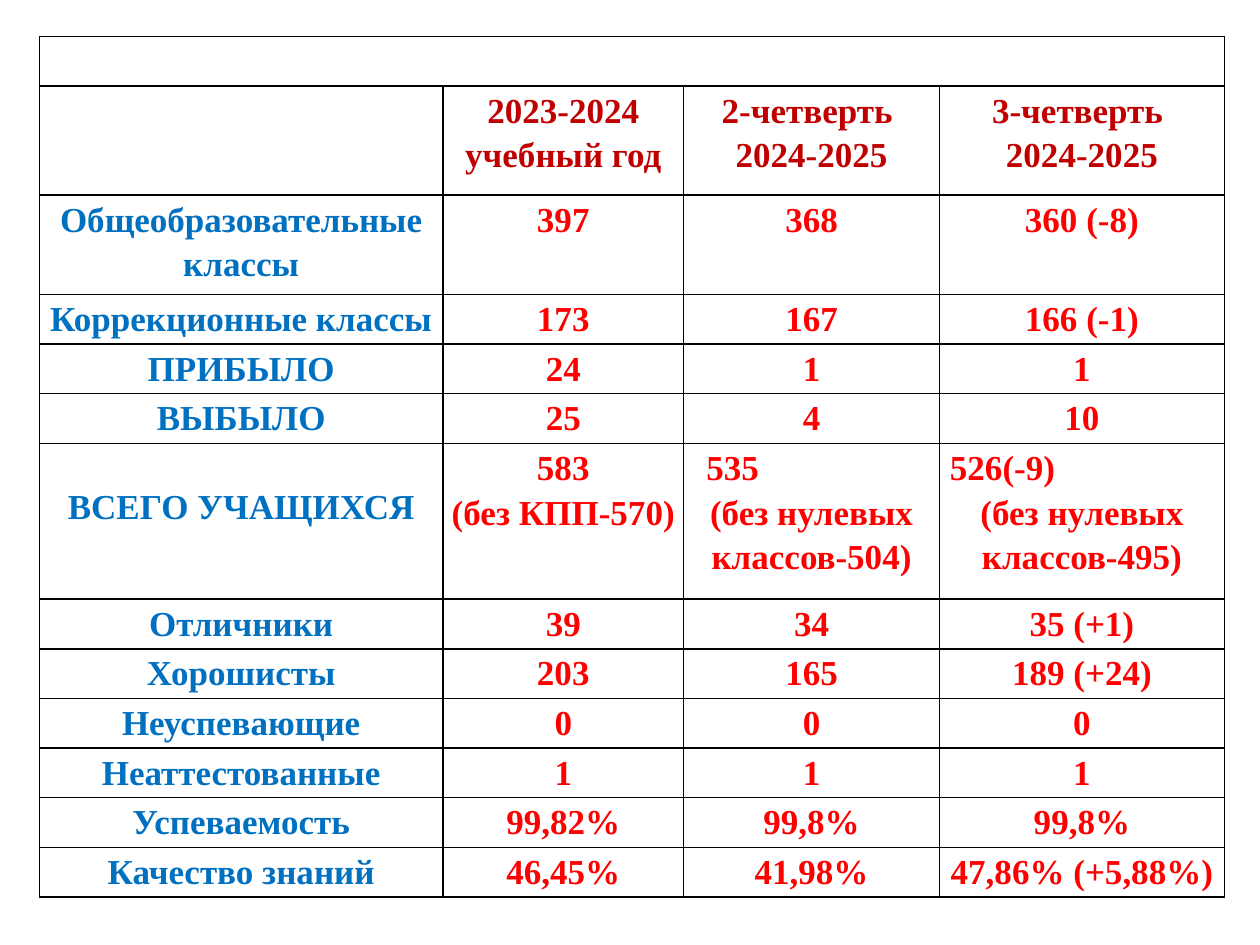
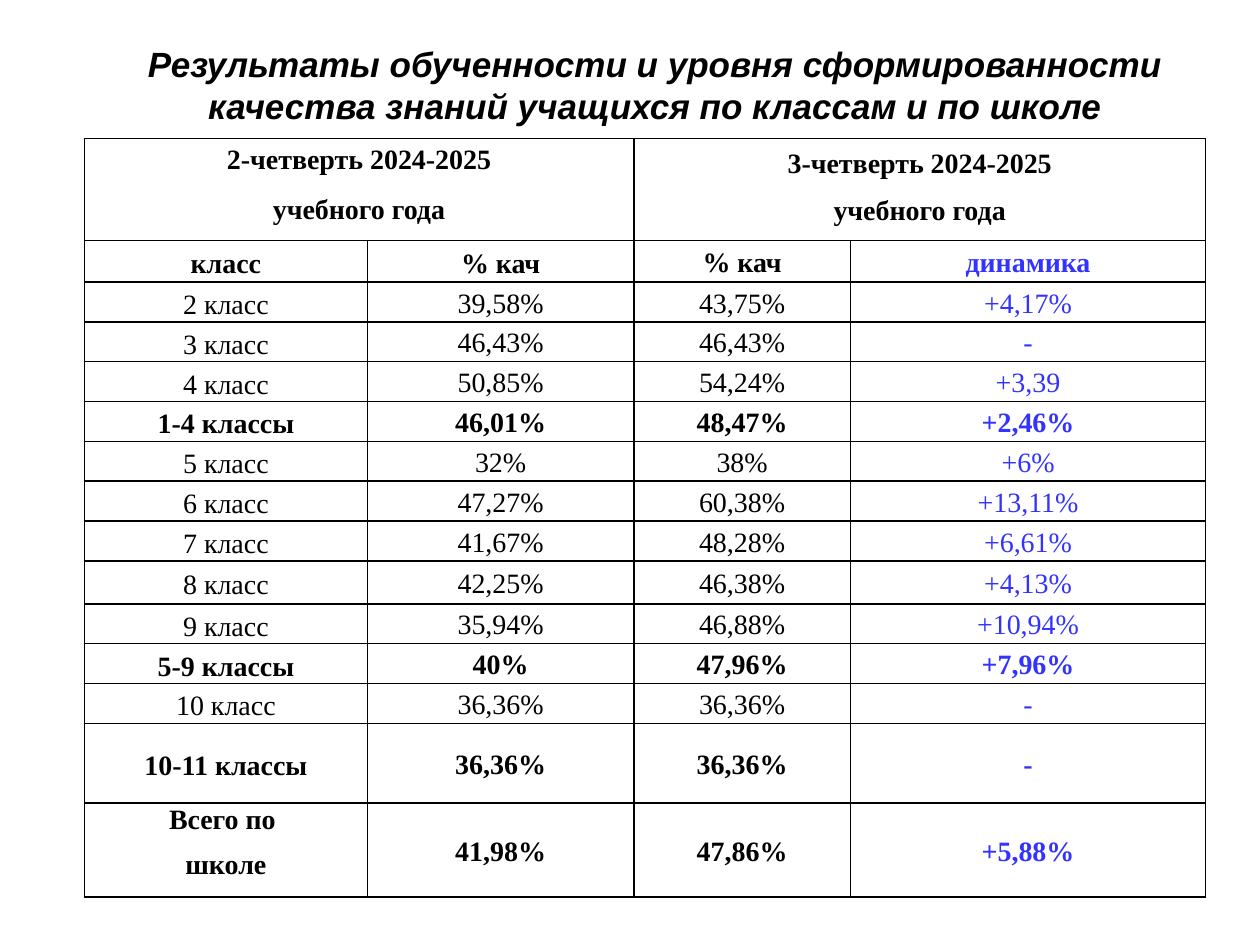
from dataclasses import dataclass

from lxml.etree import SubElement
from pptx import Presentation
from pptx.dml.color import RGBColor
from pptx.enum.text import MSO_ANCHOR, MSO_AUTO_SIZE, PP_ALIGN
from pptx.oxml.ns import qn
from pptx.util import Pt

# Content: cells hold one line per paragraph
SCHOOL_ROWS = [
    ("", "", "", ""),
    ("", "2023-2024 учебный год", "2-четверть \n2024-2025", "3-четверть \n2024-2025"),
    ("Общеобразовательные классы", "397", "368", "360 (-8)"),
    ("Коррекционные классы", "173", "167", "166 (-1)"),
    ("ПРИБЫЛО", "24", "1", "1"),
    ("ВЫБЫЛО", "25", "4", "10"),
    ("ВСЕГО УЧАЩИХСЯ", "583\n(без КПП-570)", "535\n(без нулевых классов-504)",
     "526(-9)\n(без нулевых классов-495)"),
    ("Отличники", "39", "34", "35 (+1)"),
    ("Хорошисты", "203", "165", "189 (+24)"),
    ("Неуспевающие", "0", "0", "0"),
    ("Неаттестованные", "1", "1", "1"),
    ("Успеваемость", "99,82%", "99,8%", "99,8%"),
    ("Качество знаний", "46,45%", "41,98%", "47,86% (+5,88%)"),
]
CLASSES_TITLE = ("Результаты обученности и уровня сформированности "
                 "качества знаний учащихся по классам и по школе")
CLASS_ROWS = [
    ("2-четверть 2024-2025\nучебного года", "", "3-четверть 2024-2025\nучебного года", ""),
    ("класс", "% кач", "% кач", "динамика"),
    ("2 класс", "39,58%", "43,75%", "+4,17%"),
    ("3 класс", "46,43%", "46,43%", "-"),
    ("4 класс", "50,85%", "54,24%", "+3,39"),
    ("1-4 классы", "46,01%", "48,47%", "+2,46%"),
    ("5 класс", "32%", "38%", "+6%"),
    ("6 класс", "47,27%", "60,38%", "+13,11%"),
    ("7 класс", "41,67%", "48,28%", "+6,61%"),
    ("8 класс", "42,25%", "46,38%", "+4,13%"),
    ("9 класс", "35,94%", "46,88%", "+10,94%"),
    ("5-9 классы", "40%", "47,96%", "+7,96%"),
    ("10 класс", "36,36%", "36,36%", "-"),
    ("10-11 классы", "36,36%", "36,36%", "-"),
    ("Всего по \nшколе", "41,98%", "47,86%", "+5,88%"),
]
SUMMARY_LABELS = {"1-4 классы", "5-9 классы", "10-11 классы", "Всего по \nшколе"}

# Row heights: the usual one, then the exceptions by row number
SCHOOL_COLUMNS = (230.5, 137.6, 146.2, 162.8)
SCHOOL_HEIGHT, SCHOOL_TALL = 28.35, {1: 62.3, 2: 56.8, 6: 89.1}
CLASS_COLUMNS = (161.8, 152.2, 123.8, 203)
CLASS_HEIGHT, CLASS_TALL = 22.7, {0: 58.2, 1: 23.8, 9: 24.6, 13: 45.4, 14: 53.8}
TOTAL_ROW = 6
TOTAL_INDENTS = {2: 8, 3: 1}  # first line of the total, by column


@dataclass(frozen=True)
class Theme:
    table_font: str = "Times New Roman"
    title_font: str = "Arial"
    black: str = "000000"
    period: str = "C00000"
    label: str = "0070C0"
    figure: str = "FF0000"
    trend: str = "3333FF"
    large: int = 20
    small: int = 16
    border: int = 1


THEME = Theme()


def style_font(font, name, size, color, bold, italic=False):
    font.name, font.size, font.bold, font.italic = name, Pt(size), bold, italic
    font.color.rgb = RGBColor.from_string(color)


def add_grid(slide, left, top, columns, rows, height, tall):
    """Add a table of bordered, unfilled cells."""
    heights = [tall.get(r, height) for r in range(len(rows))]
    grid = slide.shapes.add_table(len(rows), len(columns), Pt(left), Pt(top),
                                  Pt(sum(columns)), Pt(sum(heights))).table
    grid.first_row = grid.horz_banding = False
    for column, width in zip(grid.columns, columns):
        column.width = Pt(width)
    for row, row_height in zip(grid.rows, heights):
        row.height = Pt(row_height)
    for cell in grid.iter_cells():
        properties = cell._tc.get_or_add_tcPr()
        for side in ("lnL", "lnR", "lnT", "lnB"):
            line = SubElement(properties, qn(f"a:{side}"), w=str(Pt(THEME.border)))
            fill = SubElement(line, qn("a:solidFill"))
            SubElement(fill, qn("a:srgbClr"), val=THEME.black)
        cell.fill.background()
        set_margins(cell, 5, 0, 0)
    return grid


def set_margins(cell, side, top, bottom):
    cell.margin_left = cell.margin_right = Pt(side)
    cell.margin_top, cell.margin_bottom = Pt(top), Pt(bottom)


def write_cell(cell, text, size, color, bold, spacing, after=0):
    cell.text_frame.text = text
    for paragraph in cell.text_frame.paragraphs:
        paragraph.alignment = PP_ALIGN.CENTER
        paragraph.line_spacing = spacing
        paragraph.space_after = Pt(after)
        for run in paragraph.runs:
            style_font(run.font, THEME.table_font, size, color, bold)


def build_school_slide(slide):
    grid = add_grid(slide, 22.6, 20.9, SCHOOL_COLUMNS, SCHOOL_ROWS, SCHOOL_HEIGHT, SCHOOL_TALL)
    grid.cell(0, 0).merge(grid.cell(0, 3))
    for r, row in enumerate(SCHOOL_ROWS):
        for c, text in enumerate(row):
            if text:
                color = THEME.period if r == 1 else THEME.figure if c else THEME.label
                write_cell(grid.cell(r, c), text, THEME.large, color, True, 1.15)
    # Total row: lowered label, quarter totals at the left edge
    grid.cell(TOTAL_ROW, 0).margin_top = Pt(22.3)
    for c, indent in TOTAL_INDENTS.items():
        total = grid.cell(TOTAL_ROW, c).text_frame.paragraphs[0]
        total.alignment = PP_ALIGN.LEFT
        total._p.get_or_add_pPr().set("marL", str(Pt(indent)))


def build_classes_slide(slide):
    # Title
    title = slide.shapes.add_textbox(Pt(48.2), Pt(20.9), Pt(652.3), Pt(55.4)).text_frame
    title.word_wrap = True
    title.auto_size = MSO_AUTO_SIZE.SHAPE_TO_FIT_TEXT
    title.text = CLASSES_TITLE
    heading = title.paragraphs[0]
    heading.alignment = PP_ALIGN.CENTER
    style_font(heading.runs[0].font, THEME.title_font, THEME.large, THEME.black, True, True)

    # Results by class
    grid = add_grid(slide, 48.2, 79.2, CLASS_COLUMNS, CLASS_ROWS, CLASS_HEIGHT, CLASS_TALL)
    for c in (0, 2):
        grid.cell(0, c).merge(grid.cell(0, c + 1))
    last = len(CLASS_ROWS) - 1
    for r, row in enumerate(CLASS_ROWS):
        bold = r < 2 or row[0] in SUMMARY_LABELS
        for c, text in enumerate(row):
            cell = grid.cell(r, c)
            set_margins(cell, 4.3 if c == 0 else 0.7, 0.7, 0)
            if not text:
                continue
            wide = c == 0 or r == 0 or (r == 1 and c == 1)
            spacing = 1 if (r, c) == (last, 0) else 1.15 if wide else 1.07
            write_cell(cell, text, THEME.small, THEME.trend if c == 3 else THEME.black,
                       bold, spacing, 8 if c == 0 or r < 2 else 0)
            if r and (r, c) != (last, 0):
                cell.vertical_anchor = MSO_ANCHOR.MIDDLE
    quarter = grid.cell(0, 2)
    set_margins(quarter, 5.8, 2.9, 2.9)
    quarter.text_frame.paragraphs[1].line_spacing = 1.07


def main():
    deck = Presentation()
    deck.slide_width, deck.slide_height = Pt(720), Pt(540)
    blank = deck.slide_layouts[6]
    for build in (build_school_slide, build_classes_slide):
        build(deck.slides.add_slide(blank))
    deck.save("out.pptx")


if __name__ == "__main__":
    main()
